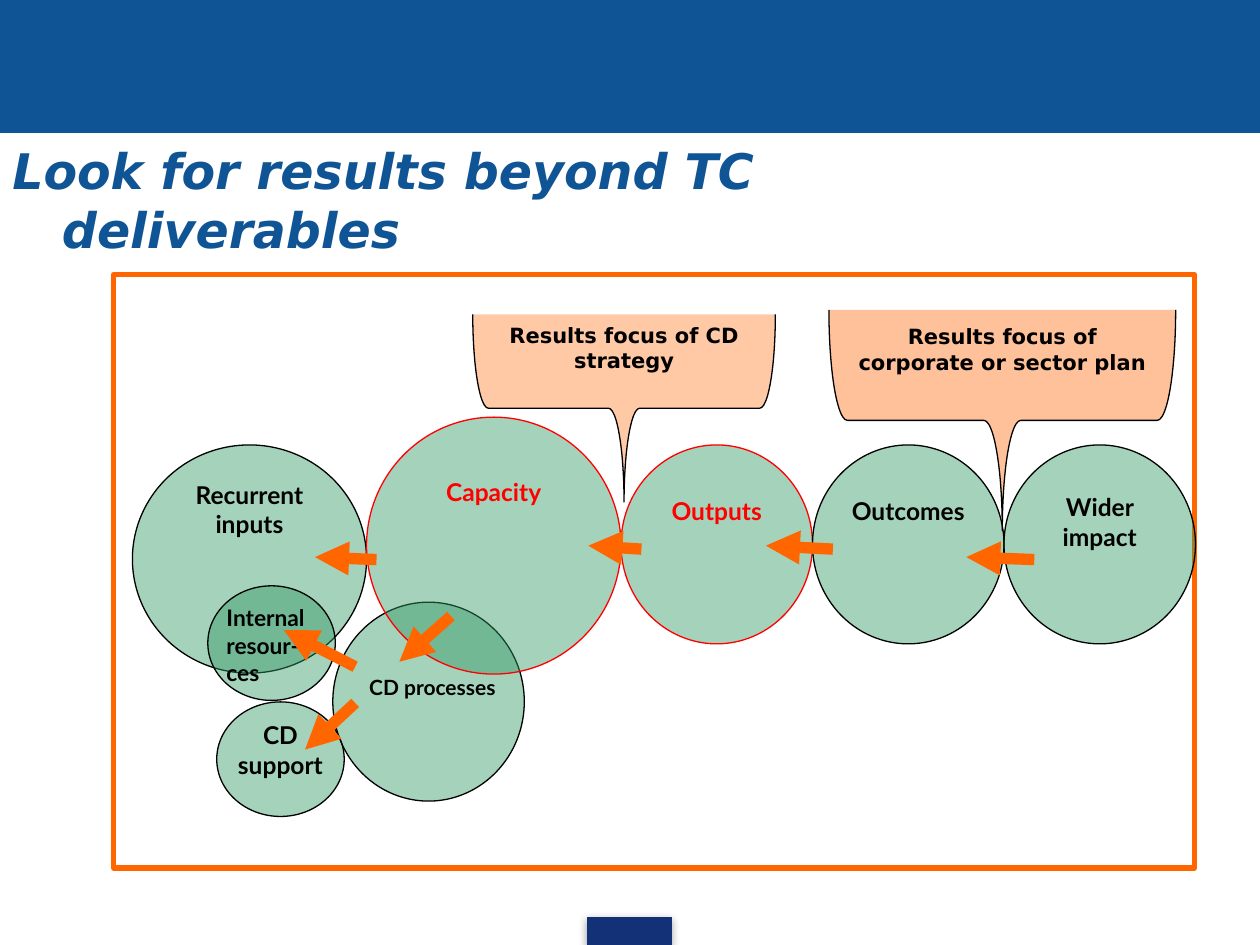
import lxml.etree
import pptx
import pptx.dml.color
import pptx.enum.shapes
import pptx.enum.text
import pptx.oxml.ns
import pptx.util

Cm = pptx.util.Cm
Pt = pptx.util.Pt
qn = pptx.oxml.ns.qn
SHAPES = pptx.enum.shapes.MSO_SHAPE
ALIGN = pptx.enum.text.PP_ALIGN
ANCHOR = pptx.enum.text.MSO_ANCHOR

COLOURS = {
    "band": "0F5494",
    "tab": "133176",
    "accent": "FF6600",
    "bubble": "339966",
    "red": "FF0000",
    "black": "000000",
}


def colour(name):
    return pptx.dml.color.RGBColor.from_string(COLOURS[name])


def add_element(parent, tag, **attributes):
    return lxml.etree.SubElement(parent, qn(tag), attributes)


def write_text(shape, text, size=14, font="Lato", ink="black", italic=False,
               align=ALIGN.CENTER, anchor=ANCHOR.TOP, insets=None):
    frame = shape.text_frame
    frame.word_wrap = True
    frame.vertical_anchor = anchor
    if insets:
        frame.margin_left, frame.margin_top, frame.margin_right, frame.margin_bottom = map(Cm, insets)
    paragraph = frame.paragraphs[0]
    paragraph.alignment = align
    run = paragraph.add_run()
    run.text = text
    run.font.name = font
    run.font.size = Pt(size)
    run.font.bold = True
    run.font.italic = italic
    run.font.color.rgb = colour(ink)
    return paragraph


class SlideBuilder:
    bubble_opacity = 44
    heading_font = "DejaVu Sans"

    def __init__(self, slide):
        self.slide = slide

    def shape(self, kind, box, fill=None, line="black", width=0.75, opacity=None):
        shape = self.slide.shapes.add_shape(kind, *map(Cm, box))
        shape.shadow.inherit = False
        if fill:
            shape.fill.solid()
            shape.fill.fore_color.rgb = colour(fill)
        else:
            shape.fill.background()
        if opacity:
            fill_colour = shape.element.spPr.find(".//" + qn("a:srgbClr"))
            add_element(fill_colour, "a:alpha", val=str(opacity * 1000))
        shape.line.color.rgb = colour(line)
        shape.line.width = Pt(width)
        return shape

    def tab(self, box):
        shape = self.shape(SHAPES.RECTANGLE, box, "tab", "tab")
        effects = shape.element.spPr.find(qn("a:effectLst"))
        shadow = add_element(effects, "a:outerShdw", blurRad=str(Pt(5)), dist=str(Pt(1.8)),
                             dir="5400000", rotWithShape="0")
        shadow_colour = add_element(shadow, "a:srgbClr", val=COLOURS["black"])
        add_element(shadow_colour, "a:alpha", val="35000")

    def title(self, text, box):
        shape = self.slide.shapes.add_textbox(*map(Cm, box))
        paragraph = write_text(shape, text, size=28, font=self.heading_font, ink="band",
                               italic=True, align=ALIGN.LEFT, anchor=ANCHOR.MIDDLE)
        properties = paragraph._p.get_or_add_pPr()
        properties.set("marL", str(Cm(1)))
        properties.set("indent", str(-Cm(1)))

    def bubble(self, text, box, ink="black", top=0.03, left=0, **text_format):
        shape = self.shape(SHAPES.OVAL, box, "bubble", ink, opacity=self.bubble_opacity)
        write_text(shape, text, ink=ink, insets=(left, top, 0, 0.03), **text_format)

    def arrow(self, *points):
        connector = self.slide.shapes.add_connector(
            pptx.enum.shapes.MSO_CONNECTOR.STRAIGHT, *map(Cm, points))
        connector.line.color.rgb = colour("accent")
        connector.line.width = Pt(6.5)
        add_element(connector.line._get_or_add_ln(), "a:tailEnd", type="triangle")
        add_element(connector._element.spPr, "a:effectLst")

    def brace(self, text, box, opacity):
        shape = self.shape(SHAPES.RIGHT_BRACE, box, "accent", opacity=opacity)
        shape.rotation = 90
        write_text(shape, text, size=12, font=self.heading_font, anchor=ANCHOR.MIDDLE)
        shape.text_frame._txBody.bodyPr.set("vert", "vert270")


def main():
    presentation = pptx.Presentation()
    presentation.slide_width = Cm(25.4)
    presentation.slide_height = Cm(19.05)
    builder = SlideBuilder(presentation.slides.add_slide(presentation.slide_layouts[6]))

    builder.shape(SHAPES.RECTANGLE, (0, 0, 25.4, 2.67), "band", "band")
    builder.tab((11.84, 18.49, 1.7, 0.56))
    builder.title("Look for results beyond TC deliverables", (0, 2.74, 22.43, 2.57))
    builder.shape(SHAPES.RECTANGLE, (2.29, 5.54, 21.79, 11.96), line="accent", width=3)

    builder.bubble("CD support", (4.37, 14.15, 2.57, 2.31))
    builder.bubble("CD processes", (6.71, 12.14, 3.86, 4.01), size=12, top=0.87, left=0.16)
    builder.bubble("Recurrent inputs", (2.67, 8.97, 4.72, 4.6))
    builder.bubble("Capacity", (7.39, 8.41, 5.13, 5.18), "red", top=0.45)
    diameter = 3.86
    results = [("Outputs", "red", 0.45), ("Outcomes", "black", 0.45), ("Wider impact", "black", 0.37)]
    for index, (text, ink, top) in enumerate(results):
        builder.bubble(text, (12.52 + index * diameter, 8.97, diameter, 4.01), ink, top)
    builder.bubble("Internal resour-ces", (4.19, 11.81, 2.57, 2.31), size=13, align=ALIGN.LEFT)

    for points in [
        (7.16, 14.17, 6.15, 15.11),
        (9.09, 12.42, 8.05, 13.34),
        (7.16, 13.44, 5.72, 12.7),
        (7.59, 11.28, 6.35, 11.23),
        (20.85, 11.28, 19.48, 11.23),
        (16.79, 11.07, 15.44, 11),
        (12.93, 11.07, 11.86, 11),
    ]:
        builder.arrow(*points)

    builder.brace("Results focus of corporate or sector plan", (17.98, 4.98, 4.45, 6.99), 40)
    builder.brace("Results focus of CD strategy", (10.69, 5.18, 3.78, 6.1), 35)

    presentation.save("out.pptx")


if __name__ == "__main__":
    main()
